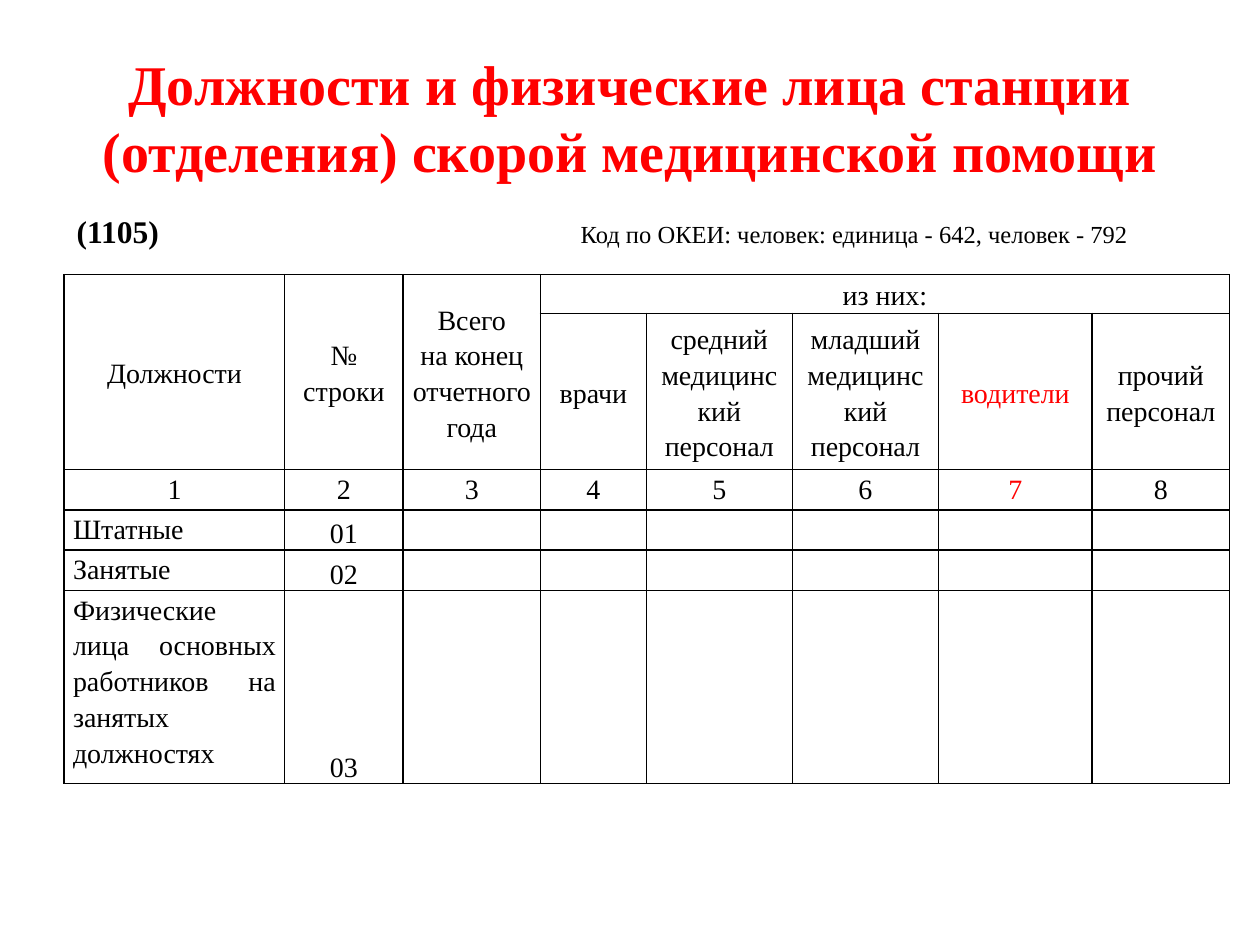
from dataclasses import dataclass
from lxml.etree import SubElement
from pptx import Presentation
from pptx.dml.color import RGBColor
from pptx.enum.text import MSO_ANCHOR, MSO_AUTO_SIZE, PP_ALIGN
from pptx.oxml.ns import qn
from pptx.util import Inches, Pt


@dataclass(frozen=True)
class Theme:
    font: str = "Times New Roman"
    gap_font: str = "Calibri"
    black: RGBColor = RGBColor(0, 0, 0)
    red: RGBColor = RGBColor(255, 0, 0)
    title: int = 32
    code: int = 18
    gap: int = 24
    note: int = 14
    cell: int = 16
    border: int = 1


@dataclass(frozen=True)
class CellText:
    row: int
    col: int
    text: str
    align: PP_ALIGN = PP_ALIGN.CENTER
    anchor: MSO_ANCHOR = MSO_ANCHOR.MIDDLE
    rows: int = 1
    cols: int = 1


THEME = Theme()
COL_WIDTHS = [1.75, 0.94, 1.09, 0.84, 1.16, 1.16, 1.22, 1.09]
ROW_HEIGHTS = [0.29, 1.24, 0.32, 0.32, 0.32, 1.24]
DRIVERS_COL = 6
TALL_HEADERS = ["Должности", "№\nстроки", "Всего\nна конец\nотчетного\nгода"]
STAFF_HEADERS = [
    "врачи",
    "средний медицинский персонал",
    "младший медицинский персонал",
    "водители",
    "прочий\nперсонал",
]
POSITIONS = [
    "Штатные",
    "Занятые",
    "Физические лица основных работников на занятых должностях",
]


def add_run(p, text: str, size: int, color: RGBColor = THEME.black,
            bold: bool = False, font: str = THEME.font) -> None:
    r = p.add_run()
    r.text = text
    r.font.name = font
    r.font.size = Pt(size)
    r.font.bold = bold
    r.font.color.rgb = color


def add_box(s, left: float, top: float, width: float, height: float):
    sp = s.shapes.add_textbox(Inches(left), Inches(top), Inches(width), Inches(height))
    sp.text_frame.word_wrap = True
    return sp.text_frame


def add_title(s) -> None:
    tf = add_box(s, 0.5, 0.3, 9, 1.25)
    tf.vertical_anchor = MSO_ANCHOR.MIDDLE
    p = tf.paragraphs[0]
    p.alignment = PP_ALIGN.CENTER
    add_run(p, "Должности и физические лица станции (отделения) скорой медицинской помощи",
            THEME.title, THEME.red, bold=True)


def add_code_line(s) -> None:
    tf = add_box(s, 0.51, 1.55, 9.49, 0.5)
    tf.auto_size = MSO_AUTO_SIZE.SHAPE_TO_FIT_TEXT
    p = tf.paragraphs[0]
    tabs = SubElement(p._p.get_or_add_pPr(), qn("a:tabLst"))
    SubElement(tabs, qn("a:tab"), pos=str(Inches(4)), algn="l")
    add_run(p, "(1105)", THEME.code, bold=True)
    add_run(p, "\t", THEME.gap, bold=True, font=THEME.gap_font)
    add_run(p, "Код по ОКЕИ: человек: единица - 642, человек - 792", THEME.note)


def style_cell(cell) -> None:
    cell.margin_left = cell.margin_right = Inches(0.07)
    cell.margin_top = cell.margin_bottom = 0
    tc_pr = cell._tc.get_or_add_tcPr()
    for side in ("lnL", "lnR", "lnT", "lnB"):
        ln = SubElement(tc_pr, qn(f"a:{side}"), w=str(Pt(THEME.border)))
        fill = SubElement(ln, qn("a:solidFill"))
        SubElement(fill, qn("a:srgbClr"), val=str(THEME.black))
    cell.fill.background()


def fill_cell(table, item: CellText) -> None:
    cell = table.cell(item.row, item.col)
    if item.rows > 1 or item.cols > 1:
        cell.merge(table.cell(item.row + item.rows - 1, item.col + item.cols - 1))
    cell.vertical_anchor = item.anchor
    color = THEME.red if item.col == DRIVERS_COL else THEME.black
    tf = cell.text_frame
    for i, line in enumerate(item.text.split("\n")):
        p = tf.add_paragraph() if i else tf.paragraphs[0]
        p.alignment = item.align
        p.line_spacing = 1.15
        add_run(p, line, THEME.cell, color)


def table_texts() -> list[CellText]:
    first = len(TALL_HEADERS)
    items = [CellText(0, c, text, rows=2) for c, text in enumerate(TALL_HEADERS)]
    items.append(CellText(0, first, "из них:", cols=len(STAFF_HEADERS)))
    items += [CellText(1, c, text) for c, text in enumerate(STAFF_HEADERS, first)]
    items += [CellText(2, c, str(c + 1), anchor=MSO_ANCHOR.TOP)
              for c in range(len(COL_WIDTHS))]
    for n, name in enumerate(POSITIONS, 1):
        items.append(CellText(n + 2, 0, name, PP_ALIGN.JUSTIFY, MSO_ANCHOR.TOP))
        items.append(CellText(n + 2, 1, f"{n:02}", anchor=MSO_ANCHOR.BOTTOM))
    return items


def add_staff_table(s) -> None:
    frame = s.shapes.add_table(
        len(ROW_HEIGHTS), len(COL_WIDTHS), Inches(0.51), Inches(2.18),
        Inches(sum(COL_WIDTHS)), Inches(sum(ROW_HEIGHTS)))
    table = frame.table
    table.first_row = table.horz_banding = False
    for col, width in zip(table.columns, COL_WIDTHS):
        col.width = Inches(width)
    for row, height in zip(table.rows, ROW_HEIGHTS):
        row.height = Inches(height)
    for cell in table.iter_cells():
        style_cell(cell)
    for item in table_texts():
        fill_cell(table, item)


def main() -> None:
    prs = Presentation()
    prs.slide_width, prs.slide_height = Inches(10), Inches(7.5)
    s = prs.slides.add_slide(prs.slide_layouts[6])
    add_title(s)
    add_staff_table(s)
    add_code_line(s)
    prs.save("out.pptx")


if __name__ == "__main__":
    main()
